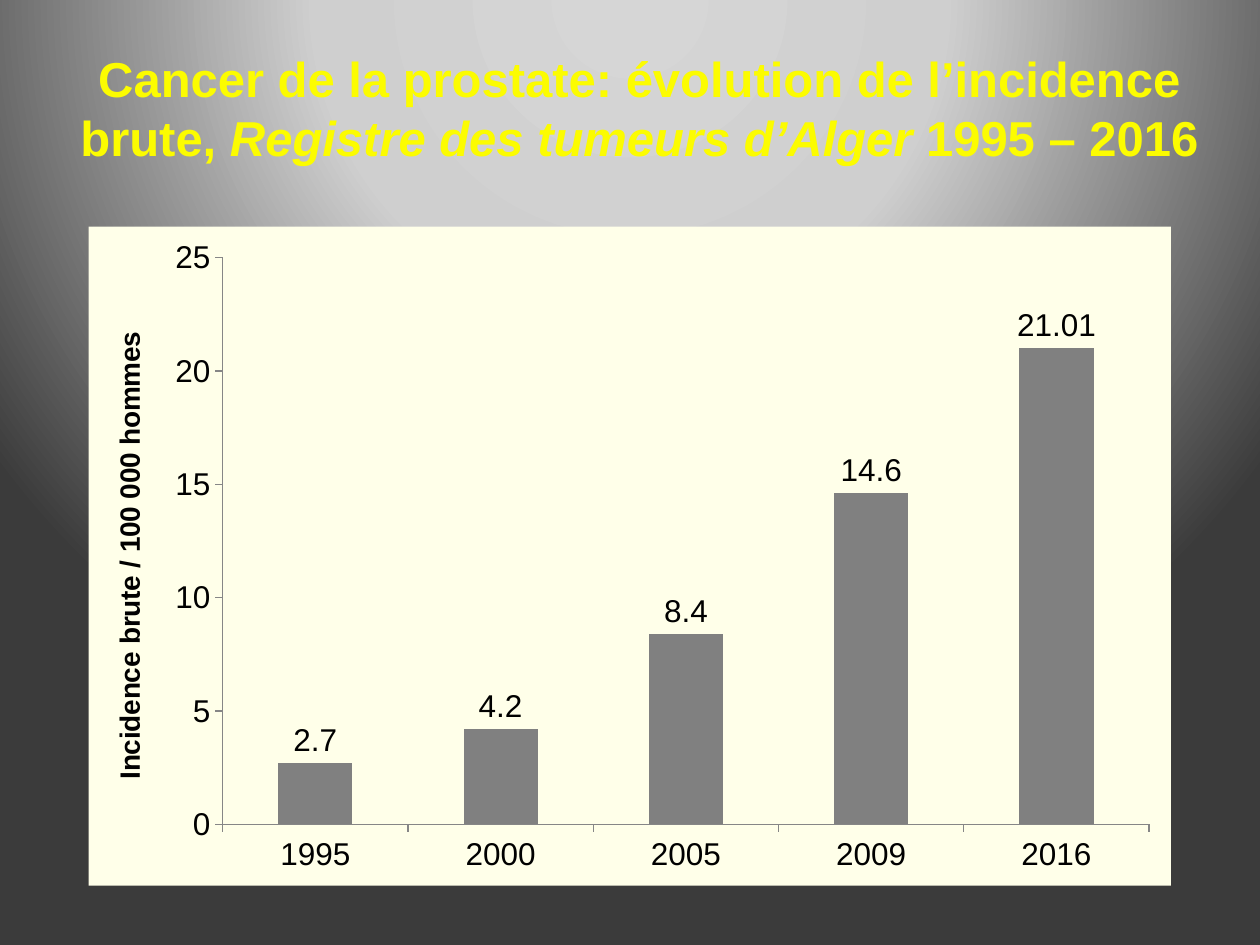
"""Build a slide with a title and a column chart of prostate cancer incidence."""
import pptx
import pptx.chart.data
import pptx.dml.color
import pptx.enum.chart
import pptx.enum.text
import pptx.oxml
import pptx.oxml.ns
import pptx.util

Pt = pptx.util.Pt
HUES = {"title": "FCFC00", "text": "000000", "bar": "808080", "axis": "868686",
        "panel": "FFFFE9", "light": "D6D6D6", "mid": "CFCFCF", "dark": "3B3B3B"}
STOPS = ((0, "light"), (40, "mid"), (100, "dark"))
TITLE = (("Cancer de la prostate: évolution de l’incidence brute, ", False),
         ("Registre des tumeurs d’Alger ", True), ("1995 – 2016", False))
RATES = {"1995": 2.7, "2000": 4.2, "2005": 8.4, "2009": 14.6, "2016": 21.01}
PLOT = {"x": 0.124, "y": 0.047, "w": 0.856, "h": 0.86}


def tint(hue):
    """Return the named colour."""
    return pptx.dml.color.RGBColor.from_string(HUES[hue])


def style(item, **marks):
    """Set each format value on an item."""
    for name, value in marks.items():
        setattr(item, name, value)


def set_font(font, size, hue="text", **marks):
    """Format a font in Arial."""
    style(font, name="Arial", size=Pt(size), **marks)
    font.color.rgb = tint(hue)


def make(tag, body):
    """Return an XML element of the given tag and content."""
    names = pptx.oxml.ns.nsdecls("a", "c")
    return pptx.oxml.parse_xml(f"<{tag} {names}>{body}</{tag}>")


def add_back(slide):
    """Give the slide a circular gradient background."""
    slide.background.fill.gradient()
    grad = slide.element.find(".//" + pptx.oxml.ns.qn("a:gradFill"))
    for part in list(grad):
        grad.remove(part)
    stops = "".join(f'<a:gs pos="{at * 1000}"><a:srgbClr val="{HUES[hue]}"/></a:gs>'
                    for at, hue in STOPS)
    grad.append(make("a:gsLst", stops))
    shade = make("a:path", '<a:fillToRect l="50000" t="-80000" r="50000" b="180000"/>')
    shade.set("path", "circle")
    grad.append(shade)


def add_title(slide):
    """Place and fill the title."""
    title = slide.shapes.title
    style(title, left=Pt(22.3), top=Pt(16.6), width=Pt(686), height=Pt(90))
    frame = title.text_frame
    style(frame, word_wrap=True, vertical_anchor=pptx.enum.text.MSO_ANCHOR.MIDDLE)
    para = frame.paragraphs[0]
    para.alignment = pptx.enum.text.PP_ALIGN.CENTER
    for text, slant in TITLE:
        run = para.add_run()
        run.text = text
        set_font(run.font, 28, "title", bold=True, italic=slant)


def set_axis(axis):
    """Format an axis with outward ticks and no grid."""
    style(axis, has_major_gridlines=False,
          major_tick_mark=pptx.enum.chart.XL_TICK_MARK.OUTSIDE)
    style(axis.format.line, width=Pt(0.75))
    axis.format.line.color.rgb = tint("axis")


def set_frame(chart):
    """Fill the chart panel and fix the plot area."""
    fill = f'<a:solidFill><a:srgbClr val="{HUES["panel"]}"/></a:solidFill>'
    space = chart.element
    space.chart.addnext(make("c:spPr", fill + "<a:ln><a:noFill/></a:ln>"))
    body = '<c:layoutTarget val="inner"/><c:xMode val="edge"/><c:yMode val="edge"/>'
    body += "".join(f'<c:{key} val="{part}"/>' for key, part in PLOT.items())
    area = space.chart.plotArea
    for old in area.findall(pptx.oxml.ns.qn("c:layout")):
        area.remove(old)
    area.insert(0, make("c:layout", f"<c:manualLayout>{body}</c:manualLayout>"))


def add_chart(slide):
    """Add the column chart of crude incidence."""
    data = pptx.chart.data.CategoryChartData()
    data.categories = list(RATES)
    data.add_series("Series 1", list(RATES.values()))
    kind = pptx.enum.chart.XL_CHART_TYPE.COLUMN_CLUSTERED
    chart = slide.shapes.add_chart(
        kind, Pt(50.6), Pt(129.5), Pt(618.5), Pt(376.6), data).chart
    style(chart, has_legend=False, has_title=False)
    set_font(chart.font, 18)
    plot = chart.plots[0]
    style(plot, gap_width=150, vary_by_categories=False, has_data_labels=True)
    style(plot.data_labels, show_value=True,
          position=pptx.enum.chart.XL_LABEL_POSITION.OUTSIDE_END)
    set_font(plot.data_labels.font, 18)
    bars = plot.series[0].format.fill
    bars.solid()
    bars.fore_color.rgb = tint("bar")
    for axis in (chart.category_axis, chart.value_axis):
        set_axis(axis)
    style(chart.value_axis, minimum_scale=0, maximum_scale=25, major_unit=5)
    name = chart.value_axis.axis_title.text_frame
    name.text = "Incidence brute / 100 000 hommes"
    set_font(name.paragraphs[0].runs[0].font, 16, bold=True)
    set_frame(chart)


def main():
    """Build and save the slide."""
    deck = pptx.Presentation()
    style(deck, slide_width=Pt(720), slide_height=Pt(540))
    slide = deck.slides.add_slide(deck.slide_layouts[5])
    add_back(slide)
    add_title(slide)
    add_chart(slide)
    deck.save("out.pptx")


if __name__ == "__main__":
    main()
